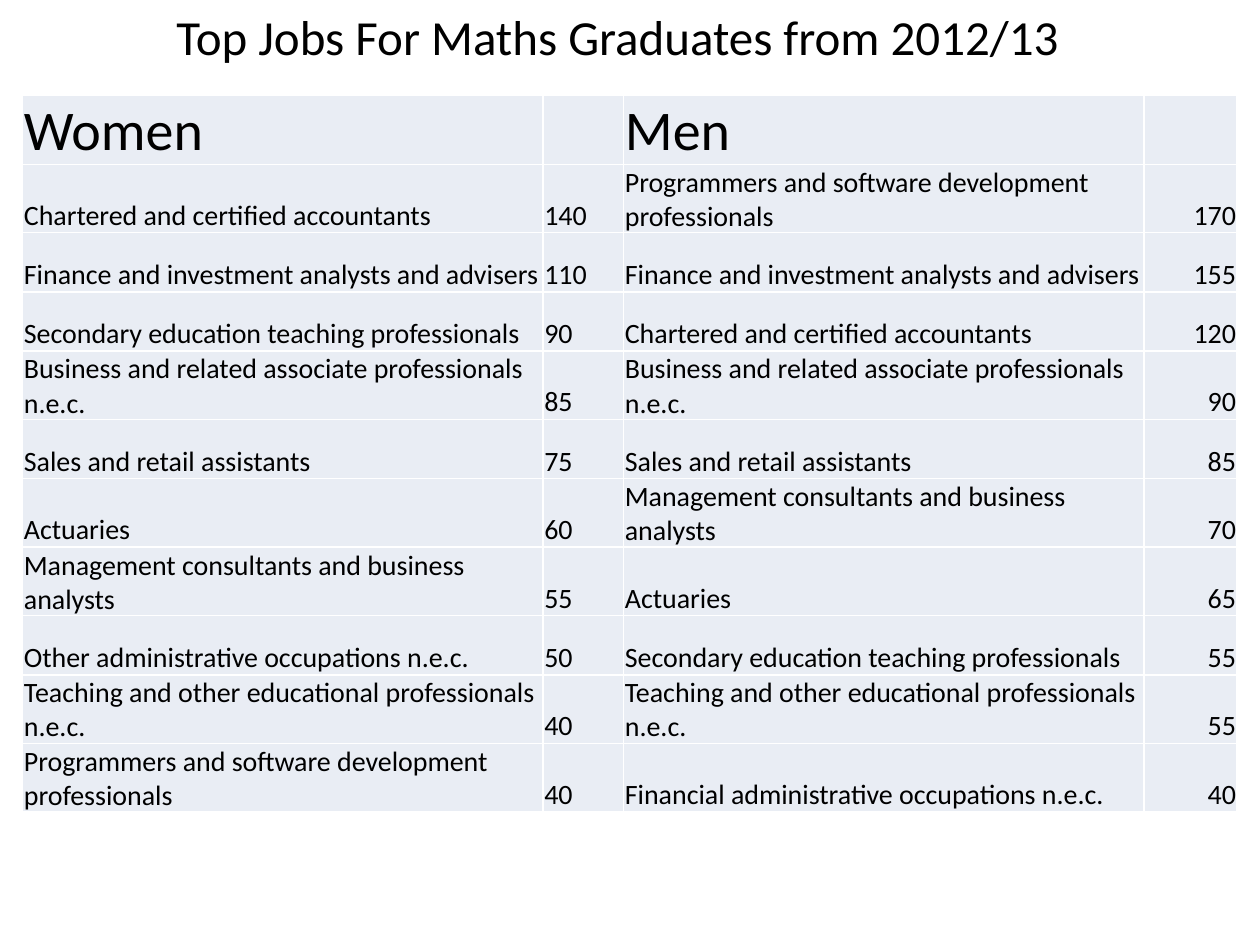
from lxml import etree
from pptx import Presentation
from pptx.dml.color import RGBColor as RGB
from pptx.enum.text import MSO_ANCHOR as Anchor, MSO_AUTO_SIZE as Fit, PP_ALIGN as Align
from pptx.oxml.ns import qn
from pptx.util import Inches, Pt

FONT = "Calibri"
COLORS = {"text": "000000", "cell": "E9EDF4", "line": "FFFFFF"}
TITLE = "Top Jobs For Maths Graduates from 2012/13"
ROWS = [
    ("Women", "", "Men", ""),
    ("Chartered and certified accountants", 140,
     "Programmers and software development professionals", 170),
    ("Finance and investment analysts and advisers", 110,
     "Finance and investment analysts and advisers", 155),
    ("Secondary education teaching professionals", 90,
     "Chartered and certified accountants", 120),
    ("Business and related associate professionals n.e.c.", 85,
     "Business and related associate professionals n.e.c.", 90),
    ("Sales and retail assistants", 75, "Sales and retail assistants", 85),
    ("Actuaries", 60, "Management consultants and business analysts", 70),
    ("Management consultants and business analysts", 55, "Actuaries", 65),
    ("Other administrative occupations n.e.c.", 50,
     "Secondary education teaching professionals", 55),
    ("Teaching and other educational professionals n.e.c.", 40,
     "Teaching and other educational professionals n.e.c.", 55),
    ("Programmers and software development professionals", 40,
     "Financial administrative occupations n.e.c.", 40),
]
WIDTHS = [4.13, 0.64, 4.13, 0.74]
ROW_H = 0.47


def write(frame, text, size, align):
    par = frame.paragraphs[0]
    par.text = text
    par.alignment = align
    par.font.name = FONT
    par.font.size = Pt(size)
    par.font.color.rgb = RGB.from_string(COLORS["text"])


def edge(cell):
    """Draw a thin line on all four sides of a cell."""
    props = cell._tc.get_or_add_tcPr()
    for spot, side in enumerate(("lnL", "lnR", "lnT", "lnB")):
        line = etree.Element(qn(f"a:{side}"), w=str(Pt(1)))
        fill = etree.SubElement(line, qn("a:solidFill"))
        etree.SubElement(fill, qn("a:srgbClr"), val=COLORS["line"])
        props.insert(spot, line)


def add_title(slide):
    box = slide.shapes.add_textbox(0, 0, Inches(9.8), Inches(0.57))
    frame = box.text_frame
    frame.word_wrap = True
    frame.auto_size = Fit.SHAPE_TO_FIT_TEXT
    write(frame, TITLE, 28, Align.CENTER)


def add_jobs(slide):
    table = slide.shapes.add_table(
        len(ROWS), len(WIDTHS), Inches(0.18), Inches(0.76),
        Inches(sum(WIDTHS)), Inches(ROW_H * len(ROWS))).table
    table.first_row = table.horz_banding = False
    for col, width in zip(table.columns, WIDTHS):
        col.width = Inches(width)
    for r, row in enumerate(ROWS):
        table.rows[r].height = Inches(ROW_H)
        for c, value in enumerate(row):
            cell = table.cell(r, c)
            cell.fill.solid()
            cell.fill.fore_color.rgb = RGB.from_string(COLORS["cell"])
            edge(cell)
            cell.vertical_anchor = Anchor.BOTTOM
            cell.margin_left = cell.margin_right = cell.margin_top = Inches(0.01)
            cell.margin_bottom = 0
            write(cell.text_frame, str(value), 16 if r else 32,
                  Align.RIGHT if c == 3 else Align.LEFT)


def main():
    deck = Presentation()
    deck.slide_width, deck.slide_height = Inches(10), Inches(7.5)
    slide = deck.slides.add_slide(deck.slide_layouts[6])
    add_title(slide)
    add_jobs(slide)
    deck.save("out.pptx")


if __name__ == "__main__":
    main()
